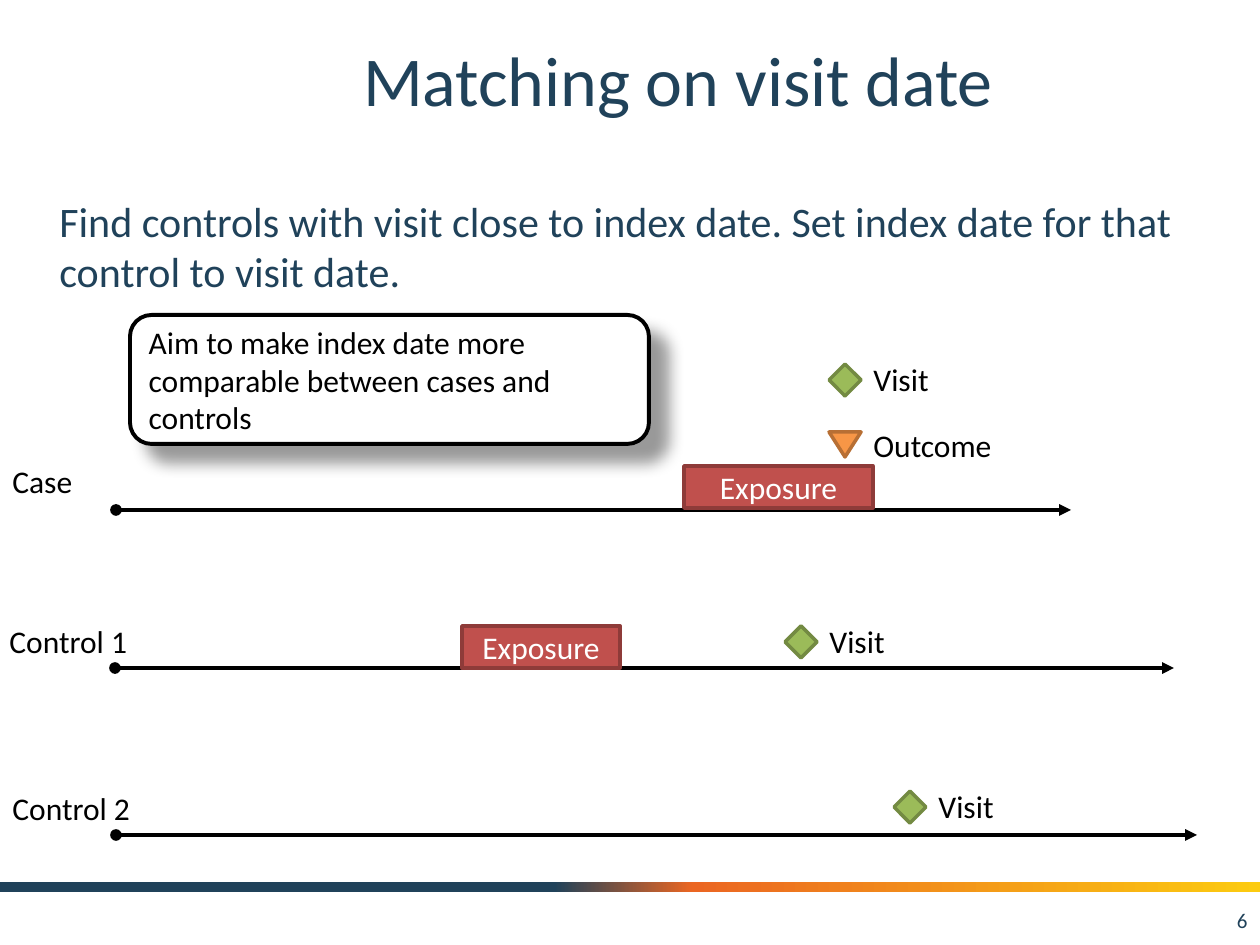
from copy import deepcopy

from lxml import etree
from pptx import Presentation
from pptx import util as u
from pptx.dml import color
from pptx.enum import shapes, text
from pptx.oxml import ns

SCALE = 914400 / 126
NAVY, BLACK, WHITE = "20425A", "000000", "FFFFFF"
SHAPE = shapes.MSO_SHAPE
ALIGN = text.PP_ALIGN
MIDDLE = text.MSO_ANCHOR.MIDDLE


def px(*values):
    return [u.Emu(round(v * SCALE)) for v in values]


def rgb(value):
    return color.RGBColor.from_string(value)


def write(sp, words, size=18, ink=BLACK, align=ALIGN.LEFT, anchor=MIDDLE, wrap=True):
    tf = sp.text_frame
    tf.text = words
    tf.word_wrap = wrap
    tf.vertical_anchor = anchor
    p = tf.paragraphs[0]
    p.alignment = align
    font = p.runs[0].font
    font.name, font.size = "Calibri", u.Pt(size)
    font.color.rgb = rgb(ink)


def add_text(s, box, words, **style):
    write(s.shapes.add_textbox(*px(*box)), words, **style)


def add_label(s, x, y, width, words):
    add_text(s, (x, y, width, 51), words, anchor=text.MSO_ANCHOR.TOP, wrap=False)


def add_shape(s, kind, box, fill, line, width=2):
    sp = s.shapes.add_shape(kind, *px(*box))
    sp.shadow.inherit = False
    sp.fill.solid()
    sp.fill.fore_color.rgb = rgb(fill)
    sp.line.color.rgb = rgb(line)
    sp.line.width = u.Pt(width)
    return sp


def add_footer_band(s):
    sp = s.shapes.add_shape(SHAPE.RECTANGLE, *px(0, 882, 1260, 10))
    sp.shadow.inherit = False
    sp.line.fill.background()
    sp.fill.gradient()
    sp.fill.gradient_angle = 0
    stops = sp._element.spPr.find(".//" + ns.qn("a:gsLst"))
    stops.append(deepcopy(stops[-1]))
    colours = [(0.44, NAVY), (0.55, "EB6622"), (1, "FCCB10")]
    for stop, (position, value) in zip(sp.fill.gradient_stops, colours):
        stop.position = position
        stop.color.rgb = rgb(value)


def add_timeline(s, x1, x2, y):
    c = s.shapes.add_connector(shapes.MSO_CONNECTOR.STRAIGHT, *px(x1, y, x2, y))
    c.line.color.rgb = rgb(BLACK)
    c.line.width = u.Pt(2.25)
    ln = c.line._get_or_add_ln()
    for tag, kind in (("a:headEnd", "oval"), ("a:tailEnd", "triangle")):
        etree.SubElement(ln, ns.qn(tag), type=kind)
    etree.SubElement(c._element.spPr, ns.qn("a:effectLst"))


def add_exposure(s, x, y, width):
    sp = add_shape(s, SHAPE.RECTANGLE, (x, y, width, 42), "C0504D", "8E3B39")
    write(sp, "Exposure", ink=WHITE, align=ALIGN.CENTER)


def add_visit(s, x, y):
    add_shape(s, SHAPE.DIAMOND, (x, y, 32, 32), "9BBB59", "738A42")
    add_label(s, x + 32, y - 10, 81, "Visit")


def add_outcome(s, x, y):
    add_shape(s, SHAPE.FLOWCHART_MERGE, (x, y, 32, 25), "F79646", "B76F34")
    add_label(s, x + 32, y - 12, 145, "Outcome")


def add_callout(s, box, words):
    sp = add_shape(s, SHAPE.ROUNDED_RECTANGLE, box, WHITE, BLACK, 2.25)
    write(sp, words)
    effects = sp._element.spPr.find(ns.qn("a:effectLst"))
    shadow = etree.SubElement(
        effects, ns.qn("a:outerShdw"), blurRad=str(u.Pt(9)), dist=str(u.Pt(14)),
        dir="2700000", algn="tl", rotWithShape="0")
    ink = etree.SubElement(shadow, ns.qn("a:srgbClr"), val=BLACK)
    etree.SubElement(ink, ns.qn("a:alpha"), val="40000")


def main():
    prs = Presentation()
    prs.slide_width, prs.slide_height = px(1260, 945)
    s = prs.slides.add_slide(prs.slide_layouts[5])

    add_footer_band(s)
    title = s.shapes.title
    title.left, title.top, title.width, title.height = px(158, 21, 1040, 116)
    write(title, "Matching on visit date", size=40, ink=NAVY, align=ALIGN.CENTER)
    add_text(s, (966, 895, 294, 50), "6", size=12, ink=NAVY, align=ALIGN.RIGHT)
    add_text(s, (47, 189, 1197, 115),
             "Find controls with visit close to index date. "
             "Set index date for that control to visit date.",
             size=24, ink=NAVY, anchor=text.MSO_ANCHOR.TOP)

    timelines = [
        ("Case", 0, 456, 86, 116, 1071, 510),
        ("Control 1", -3, 616, 145, 115, 1174, 668),
        ("Control 2", 0, 783, 145, 116, 1197, 835),
    ]
    for name, x, y, width, start, end, axis in timelines:
        add_timeline(s, start, end, axis)
        add_label(s, x, y, width, name)

    add_exposure(s, 684, 466, 189)
    add_exposure(s, 462, 626, 158)
    add_outcome(s, 829, 432)
    for x, y in ((829, 364), (785, 626), (894, 791)):
        add_visit(s, x, y)
    add_callout(s, (130, 315, 519, 129),
                "Aim to make index date more comparable between cases and controls")

    prs.save("out.pptx")


if __name__ == "__main__":
    main()
